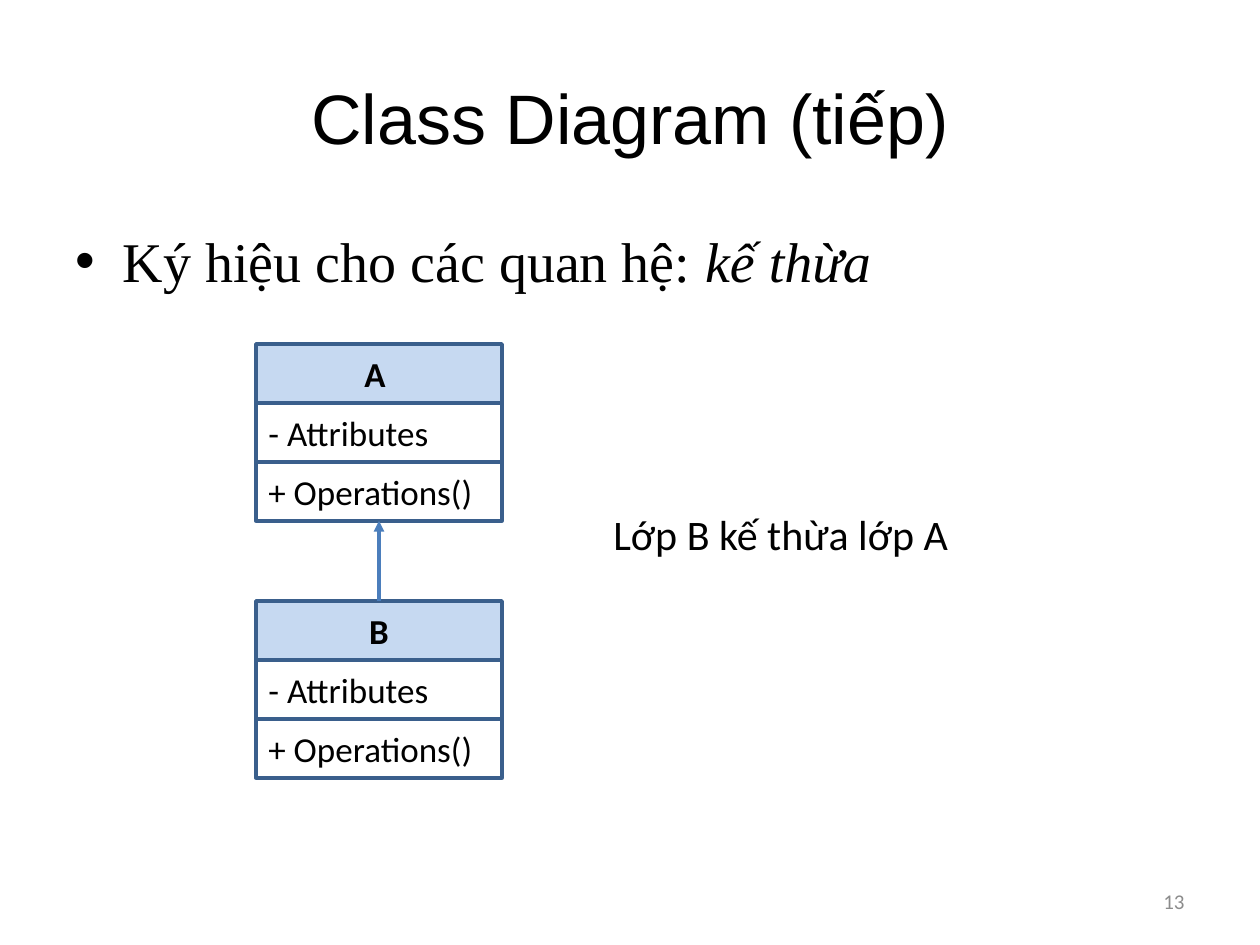
from lxml.etree import SubElement as Sub
from pptx import Presentation
from pptx.dml.color import RGBColor
from pptx.enum.shapes import MSO_CONNECTOR as Link, MSO_SHAPE as Kind
from pptx.enum.text import MSO_ANCHOR as Anchor, PP_ALIGN as Align
from pptx.oxml.ns import qn
from pptx.util import Pt

PX = 914400 // 126
BLACK = RGBColor(0, 0, 0)
WHITE = RGBColor(255, 255, 255)
GREY = RGBColor(0x8C, 0x8C, 0x8C)
PALE = RGBColor(0xC6, 0xD9, 0xF1)
NAVY = RGBColor(0x3A, 0x5F, 0x8C)
BLUE = RGBColor(0x4B, 0x7E, 0xBC)


def place(*nums):
    return [n * PX for n in nums]


def write(frame, text, size=20, font="Calibri", color=BLACK, bold=False,
          slant=False, align=Align.LEFT, anchor=Anchor.MIDDLE):
    frame.word_wrap = True
    frame.vertical_anchor = anchor
    para = frame.paragraphs[0]
    para.alignment = align
    run = para.add_run()
    run.text = text
    run.font.size = Pt(size)
    run.font.name = font
    run.font.color.rgb = color
    run.font.bold = bold
    run.font.italic = slant


deck = Presentation()
deck.slide_width, deck.slide_height = place(1260, 945)
slide = deck.slides.add_slide(deck.slide_layouts[1])
shapes = slide.shapes

title = shapes.title
title.left, title.top, title.width, title.height = place(63, 38, 1134, 157)
write(title.text_frame, "Class Diagram (tiếp)", size=40, font="Arial", align=Align.CENTER)

body = slide.placeholders[1]
body.left, body.top, body.width, body.height = place(63, 220, 1134, 624)
for text, slant in (("Ký hiệu cho các quan hệ: ", False), ("kế thừa", True)):
    write(body.text_frame, text, size=32, font="Times New Roman", slant=slant, anchor=Anchor.TOP)

page = shapes.add_textbox(*place(903, 876, 294, 50))
write(page.text_frame, "13", size=12, color=GREY, align=Align.RIGHT)

LEFT, WIDE, ROW = 256, 246, 59
TOP_A, TOP_B = 344, 601
for name, top in (("A ", TOP_A), ("B", TOP_B)):
    group = shapes.add_group_shape()
    for i, text in enumerate((name, "- Attributes", "+ Operations()")):
        head = i == 0
        box = group.shapes.add_shape(Kind.RECTANGLE, *place(LEFT, top + i * ROW, WIDE, ROW))
        box.shadow.inherit = False
        box.fill.solid()
        box.fill.fore_color.rgb = PALE if head else WHITE
        box.line.color.rgb = NAVY
        box.line.width = Pt(2)
        write(box.text_frame, text, bold=head, align=Align.CENTER if head else Align.LEFT)

mid = LEFT + WIDE // 2
arrow = shapes.add_connector(Link.STRAIGHT, *place(mid, TOP_B, mid, TOP_A + 3 * ROW))
arrow.line.color.rgb = BLUE
arrow.line.width = Pt(2)
Sub(arrow.line._get_or_add_ln(), qn("a:tailEnd"), type="triangle")
Sub(arrow._element.spPr, qn("a:effectLst"))

note = shapes.add_textbox(*place(601, 502, 403, 63))
write(note.text_frame, "Lớp B kế thừa lớp A", size=24, anchor=Anchor.TOP)

deck.save("out.pptx")
